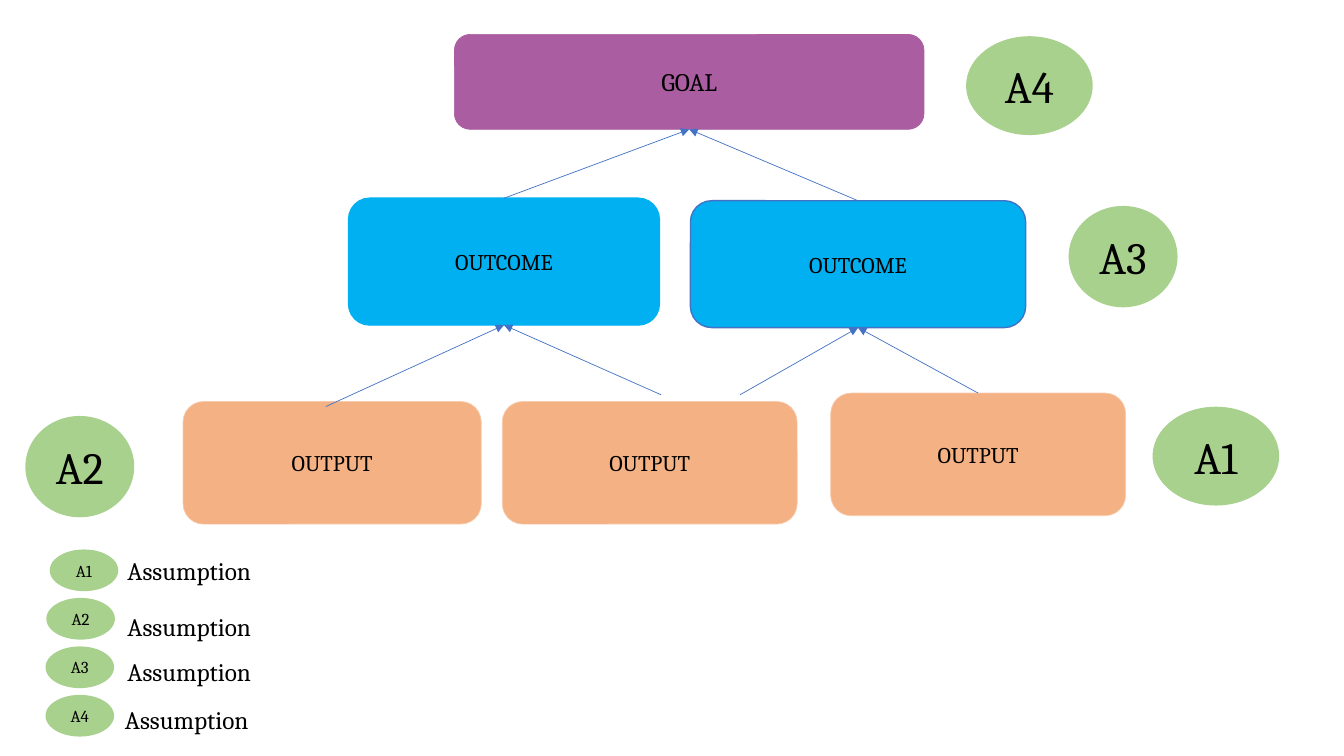
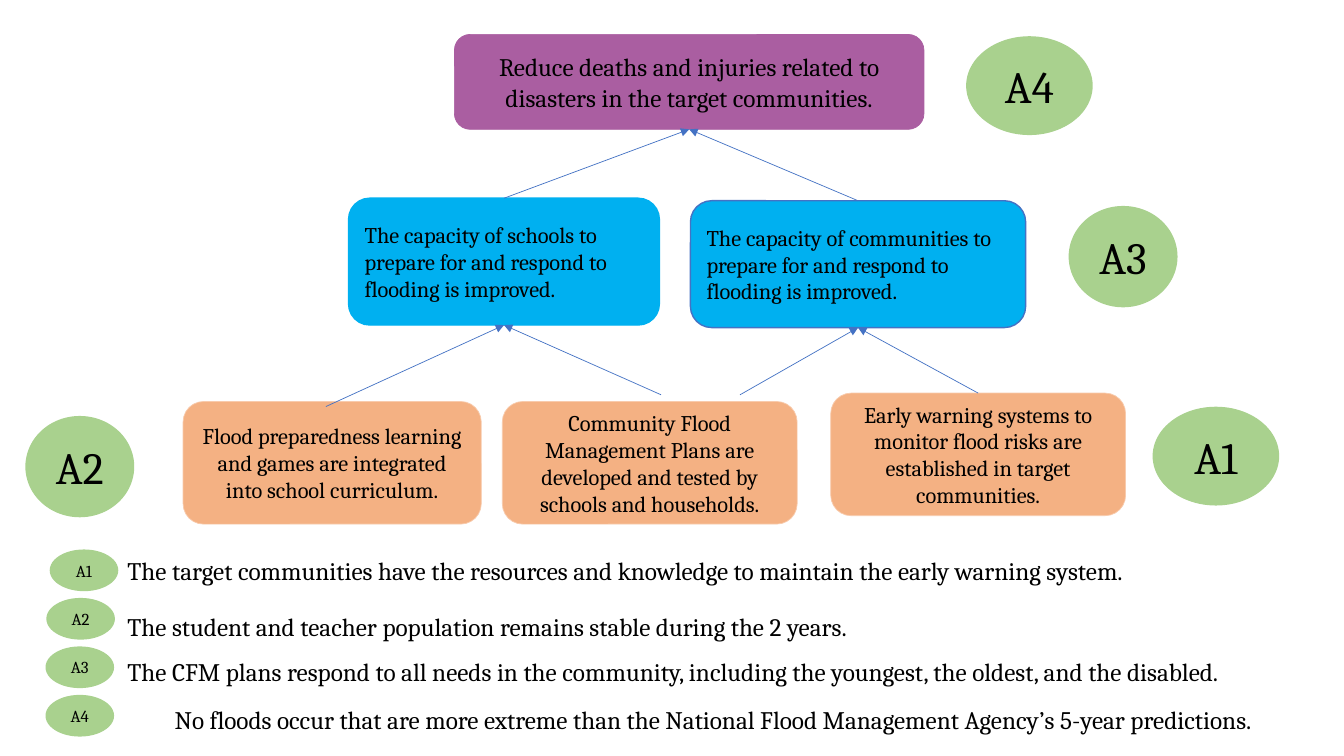
from lxml import etree
from pptx import Presentation, util as u
from pptx.dml.color import RGBColor
from pptx.enum import shapes, text
from pptx.oxml.ns import qn

prs = Presentation()
prs.slide_width, prs.slide_height = u.Inches(13.333), u.Inches(7.5)
CELL = prs.slide_height / 90  # grid of 160 columns by 90 rows

COLORS = {"goal": "AA5EA1", "outcome": "00B0F0", "output": "F4B183",
          "output_edge": "F8CBAD", "assumption": "A9D18E",
          "arrow": "4472C4", "text": "000000"}
FONT = "Cambria"
LEFT, CENTER = text.PP_ALIGN.LEFT, text.PP_ALIGN.CENTER
ROUND, OVAL = shapes.MSO_SHAPE.ROUNDED_RECTANGLE, shapes.MSO_SHAPE.OVAL

# Boxes: column, row, width, height, fill, edge, edge width, text size
BOXES = {
    "goal": (54.1, 4.1, 55.9, 11.3, "goal", "goal", 0.5, 18),
    "outcome1": (41.5, 23.6, 37, 15.1, "outcome", "outcome", 1, 16),
    "outcome2": (82.2, 23.9, 39.9, 15.1, "outcome", "arrow", 1, 16),
    "output1": (21.8, 47.8, 35.5, 14.6, "output", "output_edge", 0.5, 16),
    "output2": (59.8, 47.8, 35.1, 14.6, "output", "output_edge", 0.5, 16),
    "output3": (98.9, 46.8, 35.1, 14.6, "output", "output_edge", 0.5, 16),
}
# Arrows: a box name (its top middle) or a grid point, then the box above
ARROWS = [("outcome1", "goal"), ("outcome2", "goal"),
          ((38.8, 48.4), "outcome1"), ((78.7, 47), "outcome1"),
          ((88.1, 47), "outcome2"), ("output3", "outcome2")]
# Assumption markers beside the boxes
MARKERS = {"A1": (137.3, 48.5, 14.9, 11.6), "A2": (3.1, 49.6, 12.8, 11.9),
           "A3": (127.3, 24.6, 12.8, 11.9), "A4": (115.1, 4.4, 14.9, 11.6)}
# Legend: first row, row step, marker columns and text rows
LEGEND_TOP, LEGEND_STEP = 65.5, 5.77
LEGEND_MARKER_COLS = [6, 5.6, 5.5, 5.5]
LEGEND_TEXT_ROWS = [65.5, 72.2, 77.5, 83.3]

# Content: box texts, outcome alignment, legend texts, legend text columns
SLIDES = [
    (["GOAL", "OUTCOME", "OUTCOME", "OUTPUT", "OUTPUT", "OUTPUT"], CENTER,
     ["Assumption"] * 4, [14, 14, 14, 13.7]),
    (["Reduce deaths and injuries related to disasters in the target communities.",
      "The capacity of schools to prepare for and respond to flooding is improved.",
      "The capacity of communities to prepare for and respond to flooding is improved.",
      "Flood preparedness learning and games are integrated into school curriculum.",
      "Community Flood Management Plans are developed and tested by schools and households.",
      "Early warning systems to monitor flood risks are established in target communities."],
     LEFT,
     ["The target communities have the resources and knowledge to maintain the early warning system.",
      "The student and teacher population remains stable during the 2 years.",
      "The CFM plans respond to all needs in the community, including the youngest, the oldest, and the disabled.",
      "No floods occur that are more extreme than the National Flood Management Agency’s 5-year predictions."],
     [14, 14, 14, 19.6]),
]


def write(sp, words, size, align):
    tf = sp.text_frame
    tf.word_wrap = True
    p = tf.paragraphs[0]
    p.text, p.alignment = words, align
    p.font.size, p.font.name = u.Pt(size), FONT
    p.font.color.rgb = RGBColor.from_string(COLORS["text"])


def add_block(s, kind, area, fill, edge, width, words, size, align=CENTER):
    sp = s.shapes.add_shape(kind, *(round(n * CELL) for n in area))
    sp.shadow.inherit = False
    sp.fill.solid()
    sp.fill.fore_color.rgb = RGBColor.from_string(COLORS[fill])
    sp.line.color.rgb = RGBColor.from_string(COLORS[edge])
    sp.line.width = u.Pt(width)
    sp.text_frame.vertical_anchor = text.MSO_ANCHOR.MIDDLE
    write(sp, words, size, align)
    return sp


for box_texts, outcome_align, legend_texts, legend_cols in SLIDES:
    s = prs.slides.add_slide(prs.slide_layouts[6])

    # Results hierarchy
    boxes = {}
    for (name, spec), words in zip(BOXES.items(), box_texts):
        *area, fill, edge, width, size = spec
        align = outcome_align if fill == "outcome" else CENTER
        boxes[name] = add_block(s, ROUND, area, fill, edge, width, words, size, align)

    # Arrows from each result to the one above
    for start, target in ARROWS:
        x, y = (0, 0) if start in boxes else (round(n * CELL) for n in start)
        arrow = s.shapes.add_connector(shapes.MSO_CONNECTOR.STRAIGHT, x, y, x, y)
        if start in boxes:
            arrow.begin_connect(boxes[start], 0)
        arrow.end_connect(boxes[target], 2)
        arrow.line.color.rgb = RGBColor.from_string(COLORS["arrow"])
        arrow.line.width = u.Pt(0.5)
        etree.SubElement(arrow.line._get_or_add_ln(), qn("a:tailEnd"), type="triangle")
        etree.SubElement(arrow._element.spPr, qn("a:effectLst"))

    # Assumption markers
    for label, area in MARKERS.items():
        add_block(s, OVAL, area, "assumption", "assumption", 1, label, 32)

    # Legend
    for i, (label, words) in enumerate(zip(MARKERS, legend_texts)):
        area = (LEGEND_MARKER_COLS[i], LEGEND_TOP + i * LEGEND_STEP, 8, 4.8)
        add_block(s, OVAL, area, "assumption", "assumption", 1, label, 12)
        area = (legend_cols[i], LEGEND_TEXT_ROWS[i], 138, 4.8)
        write(s.shapes.add_textbox(*(round(n * CELL) for n in area)), words, 18, LEFT)

prs.save("out.pptx")
